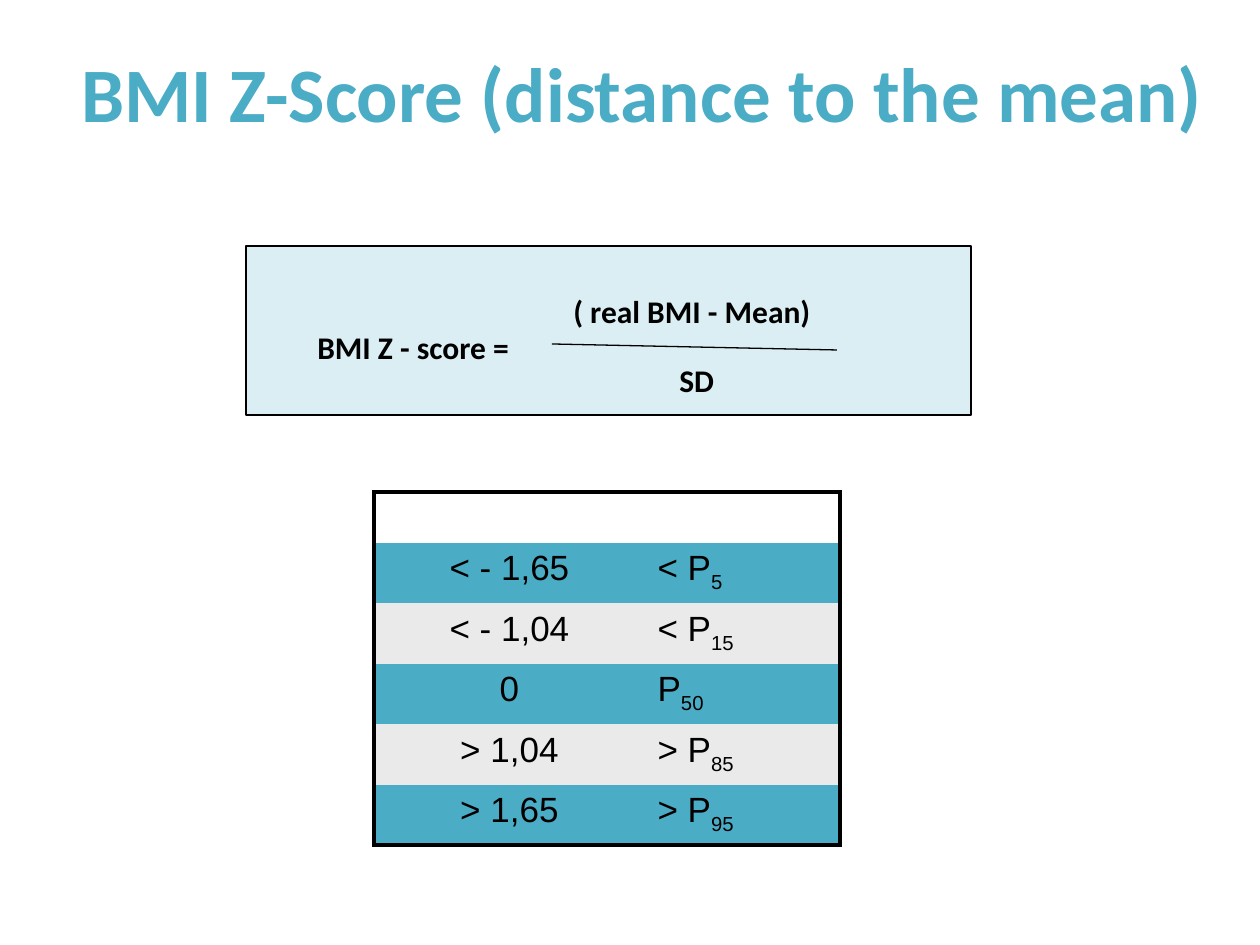
from lxml.etree import SubElement
from pptx import Presentation
from pptx.dml.color import RGBColor
from pptx.enum.shapes import MSO_CONNECTOR, MSO_SHAPE
from pptx.enum.text import PP_ALIGN
from pptx.oxml import parse_xml
from pptx.oxml.ns import nsdecls, qn
from pptx.util import Pt

BLACK = RGBColor(0x00, 0x00, 0x00)
TEAL = RGBColor(0x4B, 0xAC, 0xC6)
PALE_BLUE = RGBColor(0xDB, 0xEE, 0xF4)
GREY = RGBColor(0xEA, 0xEA, 0xEA)

LABEL = {"name": "Calibri", "size": Pt(18), "bold": True}
HEADING = {"name": "Calibri", "size": Pt(44), "bold": True}
CELL = {"name": "Arial", "size": Pt(20)}

FORMULA_BOX = (246, 246, 725, 169)
FRACTION_BAR = (552, 344, 837, 350)
TEXTS = [
    ("BMI Z - score =", (305, 322, 287, 50), LABEL, BLACK),
    ("( real BMI - Mean)", (561, 286, 367, 50), LABEL, BLACK),
    ("SD", (667, 355, 317, 50), LABEL, BLACK),
    ("BMI Z-Score (distance to the mean)", (69, 39, 1166, 106), HEADING, TEAL),
]
SCORES = [
    ("< - 1,65", "< P", "5"),
    ("< - 1,04", "< P", "15"),
    ("0", "P", "50"),
    ("> 1,04", "> P", "85"),
    ("> 1,65", "> P", "95"),
]
TABLE_LEFT, TABLE_TOP = 374, 492
COLUMN_WIDTHS = (271, 195)
HEADER_HEIGHT, SCORE_HEIGHT = 51, 60


def px(*lengths):
    return [round(length * 914400 / 126) for length in lengths]


def add_run(paragraph, text, style, color):
    run = paragraph.add_run()
    run.text = text
    for key, value in style.items():
        setattr(run.font, key, value)
    run.font.color.rgb = color
    return run


def draw_borders(cell, sides):
    properties = cell._tc.get_or_add_tcPr()
    for index, side in enumerate("LRTB"):
        paint = '<a:solidFill><a:srgbClr val="000000"/></a:solidFill>' if side in sides else "<a:noFill/>"
        border = f'<a:ln{side} {nsdecls("a")} w="{Pt(2.25)}">{paint}</a:ln{side}>'
        properties.insert(index, parse_xml(border))


def add_formula(slide):
    box = slide.shapes.add_shape(MSO_SHAPE.RECTANGLE, *px(*FORMULA_BOX))
    box.shadow.inherit = False
    box.fill.solid()
    box.fill.fore_color.rgb = PALE_BLUE
    bar = slide.shapes.add_connector(MSO_CONNECTOR.STRAIGHT, *px(*FRACTION_BAR))
    SubElement(bar._element.spPr, qn("a:effectLst"))
    for outline in (box.line, bar.line):
        outline.color.rgb = BLACK
        outline.width = Pt(0.75)
    for text, place, style, color in TEXTS:
        label = slide.shapes.add_textbox(*px(*place)).text_frame
        label.word_wrap = True
        add_run(label.paragraphs[0], text, style, color)


def add_scores(slide):
    heights = [HEADER_HEIGHT] + [SCORE_HEIGHT] * len(SCORES)
    place = px(TABLE_LEFT, TABLE_TOP, sum(COLUMN_WIDTHS), sum(heights))
    table = slide.shapes.add_table(len(heights), len(COLUMN_WIDTHS), *place).table
    table.first_row = table.horz_banding = False
    for column, width in zip(table.columns, px(*COLUMN_WIDTHS)):
        column.width = width
    for row, height in zip(table.rows, px(*heights)):
        row.height = height
    table.cell(0, 0).merge(table.cell(0, 1))

    for r, (score, percentile, subscript) in enumerate(SCORES, 1):
        score_paragraph, rank_paragraph = (table.cell(r, c).text_frame.paragraphs[0] for c in (0, 1))
        score_paragraph.alignment = PP_ALIGN.CENTER
        add_run(score_paragraph, score, CELL, BLACK)
        add_run(rank_paragraph, percentile, CELL, BLACK)
        lowered = add_run(rank_paragraph, subscript, CELL, BLACK)
        lowered.font._element.set("baseline", "-25000")

    for r in range(len(heights)):
        for c in range(len(COLUMN_WIDTHS)):
            cell = table.cell(r, c)
            if r == 0:
                cell.fill.background()
            else:
                cell.fill.solid()
                cell.fill.fore_color.rgb = TEAL if r % 2 else GREY
            outer = {
                "L": c == 0,
                "R": c + cell.span_width == len(COLUMN_WIDTHS),
                "T": r == 0,
                "B": r == len(SCORES),
            }
            draw_borders(cell, [side for side, drawn in outer.items() if drawn])


def main():
    """Build the BMI Z-score slide with its formula and percentile table."""
    deck = Presentation()
    deck.slide_width, deck.slide_height = px(1260, 945)
    slide = deck.slides.add_slide(deck.slide_layouts[6])
    add_formula(slide)
    add_scores(slide)
    deck.save("out.pptx")


if __name__ == "__main__":
    main()
